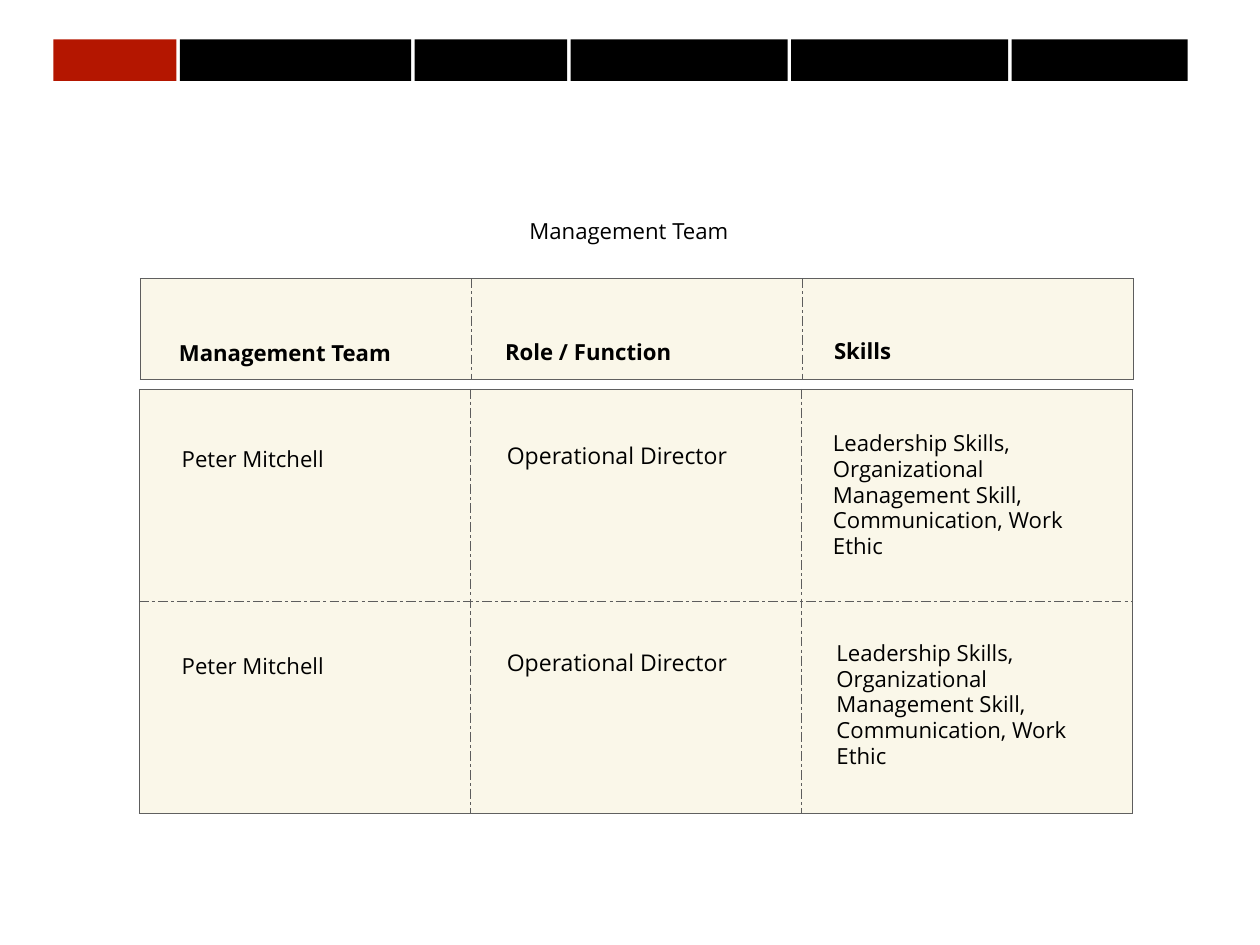
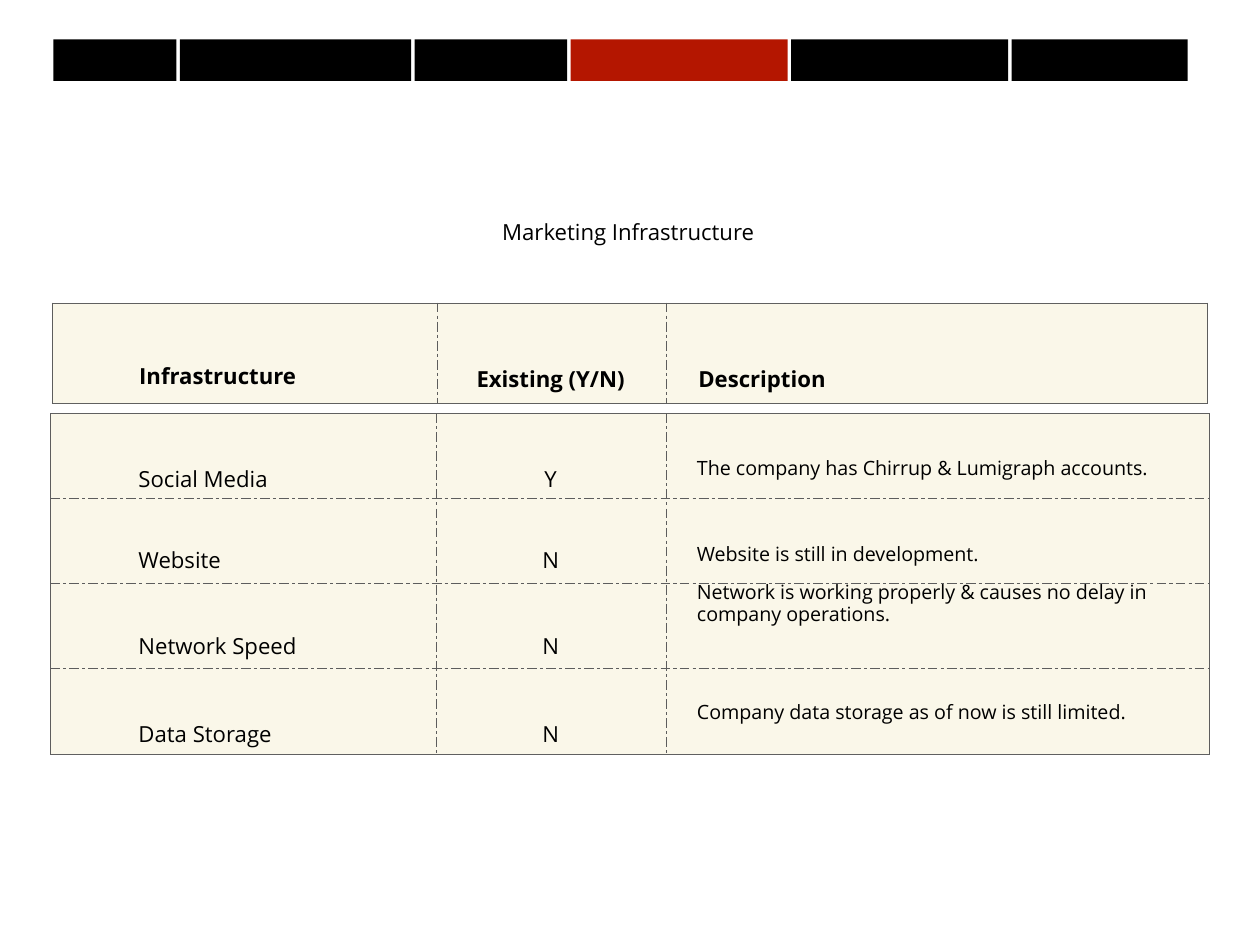
from dataclasses import dataclass

from pptx import Presentation
from pptx.dml.color import RGBColor
from pptx.enum.shapes import MSO_SHAPE
from pptx.enum.text import MSO_ANCHOR, PP_ALIGN
from pptx.oxml.ns import qn
from pptx.util import Cm, Pt
from lxml.etree import SubElement


@dataclass(frozen=True)
class Theme:
    font: str = "Open Sans"
    ink: str = "000000"
    accent: str = "B41600"
    cream: str = "FAF7E9"
    side: str = "5D5D5D"
    edge: str = "606060"
    body: float = 18
    role: float = 18.7
    small: float = 16
    rule: float = 0.75
    inset: float = 0.08
    leading: float = 2.23


T = Theme()
NAV_BOX = (1.53, 1.13, 1.19)
NAV_WIDTHS = (3.53, 6.63, 4.37, 6.22, 6.22, 5.05)
NAV_GAP = 0.1
LABEL_SIZE = (7.19, 1.19)


def color(value):
    return RGBColor.from_string(value)


# Text box; each line of the text is one paragraph
def add_label(s, at, text, box_size=LABEL_SIZE, size=T.body, bold=False,
              align=PP_ALIGN.LEFT, leading=T.leading, anchor=MSO_ANCHOR.TOP):
    tf = s.shapes.add_textbox(*map(Cm, (*at, *box_size))).text_frame
    tf.word_wrap = True
    tf.vertical_anchor = anchor
    tf.margin_left = tf.margin_right = tf.margin_top = tf.margin_bottom = Cm(T.inset)
    tf.text = text
    for p in tf.paragraphs:
        p.alignment = align
        p.line_spacing = leading
        font = p.runs[0].font
        font.name, font.size, font.bold = T.font, Pt(size), bold
        font.color.rgb = color(T.ink)


# Navigation band with the current section highlighted
def add_nav(s, box, active):
    left, top, height = box
    for i, width in enumerate(NAV_WIDTHS):
        sp = s.shapes.add_shape(MSO_SHAPE.RECTANGLE, Cm(left), Cm(top), Cm(width), Cm(height))
        sp.shadow.inherit = False
        sp.fill.solid()
        sp.fill.fore_color.rgb = color(T.accent if i == active else T.ink)
        sp.line.fill.background()
        left += width + NAV_GAP


def add_border(cell, tag, value, dashed):
    ln = SubElement(cell._tc.get_or_add_tcPr(), qn(f"a:{tag}"), w=str(Pt(T.rule)))
    SubElement(SubElement(ln, qn("a:solidFill")), qn("a:srgbClr"), val=value)
    SubElement(ln, qn("a:prstDash"), val="dashDot" if dashed else "solid")


# Table grid: solid frame, dash-dot rules inside
def add_grid(s, at, widths, row_height, row_count):
    last_row, last_col = row_count - 1, len(widths) - 1
    table = s.shapes.add_table(row_count, len(widths), *map(Cm, at),
                               Cm(sum(widths)), Cm(row_height * row_count)).table
    table.first_row = table.horz_banding = False
    for column, width in zip(table.columns, widths):
        column.width = Cm(width)
    for r, row in enumerate(table.rows):
        row.height = Cm(row_height)
        for c, cell in enumerate(row.cells):
            add_border(cell, "lnL", T.side, c > 0)
            add_border(cell, "lnR", T.side, c < last_col)
            add_border(cell, "lnT", T.side if r > 0 else T.edge, r > 0)
            add_border(cell, "lnB", T.side if r < last_row else T.edge, r < last_row)
            cell.fill.solid()
            cell.fill.fore_color.rgb = color(T.cream)


def add_page(prs, title, title_at, active):
    s = prs.slides.add_slide(prs.slide_layouts[6])
    add_nav(s, NAV_BOX, active)
    add_label(s, title_at, title, (16.26, 1.19), align=PP_ALIGN.CENTER,
              anchor=MSO_ANCHOR.MIDDLE)
    return s


def team_slide(prs):
    s = add_page(prs, "Management Team", (9.9, 5.56), active=0)
    widths = [9.49] * 3
    add_grid(s, (3.99, 11.16), widths, 6.09, 2)
    add_grid(s, (4.02, 7.99), widths, 2.88, 1)

    # Column heads
    for text, left, top in [("Management Team", 5.05, 8.71),
                            ("Role / Function", 14.4, 8.69),
                            ("Skills", 23.83, 8.66)]:
        add_label(s, (left, top), text, bold=True)

    # Members: top of name, top of role, place of skills
    skills = ("Leadership Skills,\nOrganizational\nManagement Skill,\n"
              "Communication, Work Ethic")
    for name_top, role_top, skills_at in [(11.76, 10.13, (23.8, 13.61)),
                                          (17.68, 16.08, (23.9, 19.63))]:
        add_label(s, (5.13, name_top), "Peter Mitchell")
        add_label(s, (14.45, role_top), "Operational Director", (7.19, 4.93),
                  size=T.role, leading=2.15, anchor=MSO_ANCHOR.MIDDLE)
        add_label(s, skills_at, skills, leading=0.97, anchor=MSO_ANCHOR.MIDDLE)


def infrastructure_slide(prs):
    s = add_page(prs, "Marketing Infrastructure", (9.88, 5.59), active=3)
    add_grid(s, (1.45, 11.86), (11.07, 6.58, 15.57), 2.44, 4)
    add_grid(s, (1.5, 8.69), (11.05, 6.55, 15.52), 2.88, 1)

    # Column heads
    for text, left, top, align in [("Infrastructure", 3.91, 9.37, PP_ALIGN.LEFT),
                                   ("Existing (Y/N)", 12.19, 9.45, PP_ALIGN.CENTER),
                                   ("Description", 19.94, 9.45, PP_ALIGN.LEFT)]:
        add_label(s, (left, top), text, bold=True, align=align)

    # Name, status, their top; description with its top, box and leading
    items = [
        ("Social Media", "Y", 12.34,
         "The company has Chirrup & Lumigraph accounts.", 12.29, (13.44, 1.19), 2.02),
        ("Website", "N", 14.64,
         "Website is still in development.", 14.68, (8.31, 0.97), 2.15),
        ("Network Speed", "N", 17.13,
         "Network is working properly & causes no delay in\ncompany operations.",
         16.64, (16.2, 2.41), 0.9),
        ("Data Storage", "N", 19.64,
         "Company data storage as of now is still limited.", 19.28, (14.58, 1.65), 2.05),
    ]
    for name, status, top, text, text_top, box_size, leading in items:
        add_label(s, (3.89, top), name)
        add_label(s, (12.19, top), status, align=PP_ALIGN.CENTER)
        add_label(s, (19.9, text_top), text, box_size, size=T.small, leading=leading)


def main():
    prs = Presentation()
    prs.slide_width, prs.slide_height = Cm(36.12), Cm(27.1)
    team_slide(prs)
    infrastructure_slide(prs)
    prs.save("out.pptx")


if __name__ == "__main__":
    main()
